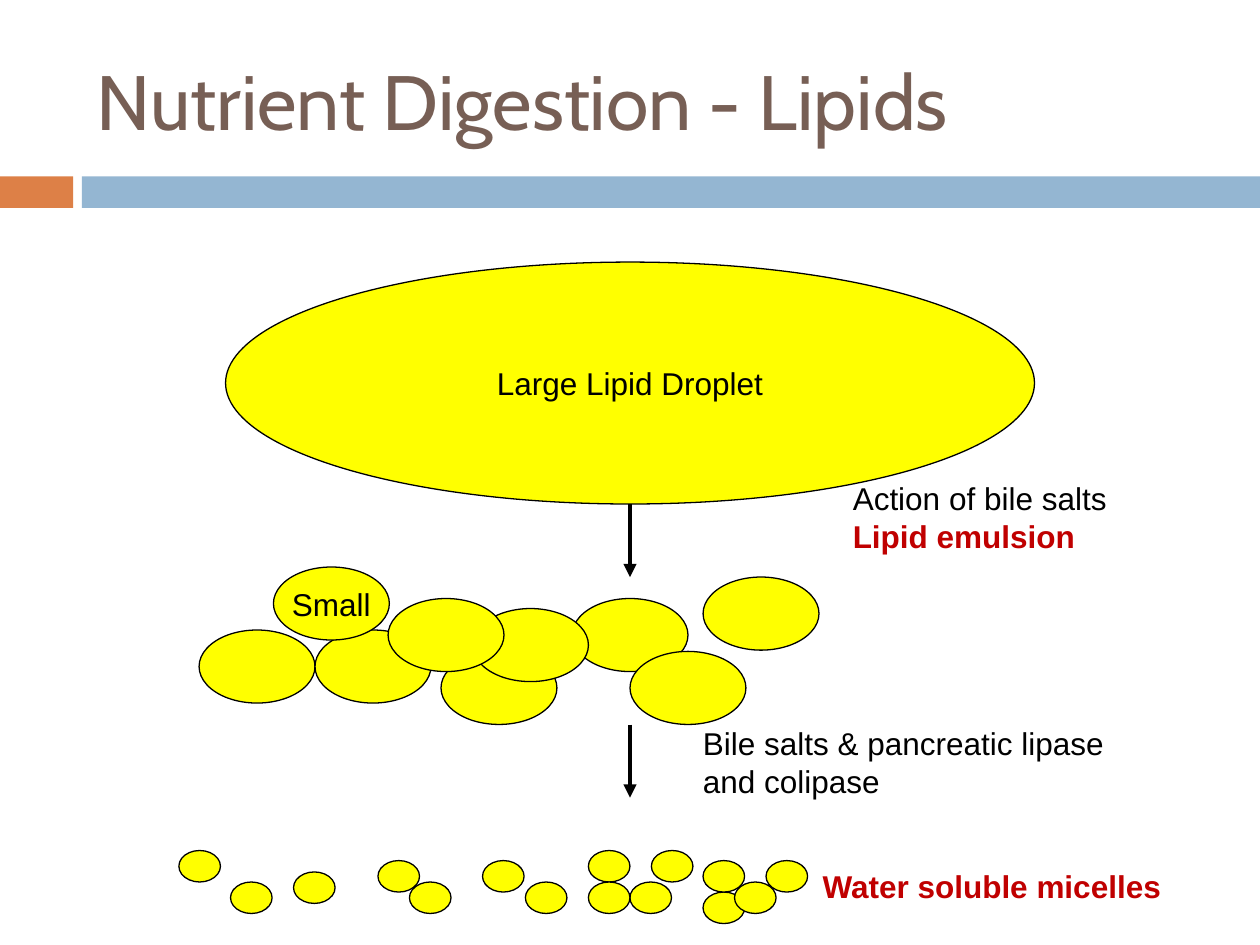
"""Build the lipid digestion slide: large droplet, emulsion, micelles."""
from pptx import Presentation
from pptx import util as u
from pptx.dml.color import RGBColor
from pptx.enum import shapes, text
from pptx.oxml import parse_xml
from pptx.oxml.ns import nsdecls

ORANGE = RGBColor(0xDD, 0x80, 0x47)
BLUE = RGBColor(0x94, 0xB6, 0xD2)
BROWN = RGBColor(0x77, 0x5F, 0x55)
YELLOW = RGBColor(0xFF, 0xFF, 0x00)
RED = RGBColor(0xC0, 0x00, 0x00)
BLACK = RGBColor(0x00, 0x00, 0x00)

DROPLET_SIZE = (0.92, 0.58)
MICELLE_SIZE = (0.33, 0.25)
DROPLETS = [
    (1.58, 5, ""), (5.58, 4.58, ""), (2.5, 5, ""), (2.17, 4.5, "Small"),
    (4.54, 4.75, ""), (3.5, 5.17, ""), (3.75, 4.83, ""), (5, 5.17, ""),
    (3.08, 4.75, ""),
]
MICELLES = [
    (1.42, 6.75), (1.83, 7), (3.25, 7), (2.33, 6.92), (3.83, 6.83),
    (5, 7), (4.17, 7), (3, 6.83), (4.67, 6.75), (5.17, 6.75),
    (4.67, 7), (5.58, 7.08), (5.58, 6.83), (6.08, 6.83), (5.83, 7),
]


class Deck:
    """Hold the text style and the current slide."""

    def __init__(self, prs):
        self.s = prs.slides.add_slide(prs.slide_layouts[6])
        self.body = {"name": "Arial", "size": u.Pt(18), "bold": False}

    def fill_text(self, tf, lines, align=text.PP_ALIGN.LEFT, **style):
        """Fill a text frame with (wording, format) lines."""
        for i, (words, fmt) in enumerate(lines):
            p = tf.add_paragraph() if i else tf.paragraphs[0]
            p.alignment = align
            r = p.add_run()
            r.text = words
            values = {**self.body, **style, **fmt}
            r.font.color.rgb = values.pop("color", BLACK)
            for name, value in values.items():
                setattr(r.font, name, value)

    def shape(self, kind, box, fill):
        """Add a filled preset shape without a shadow."""
        sp = self.s.shapes.add_shape(kind, *map(u.Inches, box))
        sp.shadow.inherit = False
        sp.fill.solid()
        sp.fill.fore_color.rgb = fill
        return sp

    def bar(self, box, fill):
        """Add a plain band."""
        self.shape(shapes.MSO_SHAPE.RECTANGLE, box, fill).line.fill.background()

    def drop(self, x, y, size, label=""):
        """Add a yellow lipid drop, labelled if asked."""
        sp = self.shape(shapes.MSO_SHAPE.OVAL, (x, y, *size), YELLOW)
        sp.line.color.rgb = BLACK
        sp.line.width = u.Pt(0.75)
        if label:
            tf = sp.text_frame
            tf.word_wrap = False
            tf.vertical_anchor = text.MSO_ANCHOR.MIDDLE
            self.fill_text(tf, [(label, {})], text.PP_ALIGN.CENTER)

    def arrow(self, x, top, bottom):
        """Add a downward arrow."""
        c = self.s.shapes.add_connector(
            shapes.MSO_CONNECTOR.STRAIGHT, *map(u.Inches, (x, top, x, bottom)))
        c.line.color.rgb = BLACK
        c.line.width = u.Pt(2.5)
        c.line._get_or_add_ln().append(
            parse_xml(f'<a:tailEnd {nsdecls("a")} type="triangle"/>'))
        c._element.spPr.append(parse_xml(f'<a:effectLst {nsdecls("a")}/>'))

    def note(self, box, lines):
        """Add an unwrapped text box that fits its text."""
        tf = self.s.shapes.add_textbox(*map(u.Inches, box)).text_frame
        tf.word_wrap = False
        tf.auto_size = text.MSO_AUTO_SIZE.SHAPE_TO_FIT_TEXT
        self.fill_text(tf, lines)

    def title(self, box, words):
        """Add the slide heading."""
        tf = self.s.shapes.add_textbox(*map(u.Inches, box)).text_frame
        tf.word_wrap = True
        tf.vertical_anchor = text.MSO_ANCHOR.MIDDLE
        self.fill_text(tf, [(words, {})], name="Cabin", size=u.Pt(44), color=BROWN)


def main():
    prs = Presentation()
    prs.slide_width, prs.slide_height = u.Inches(10), u.Inches(7.5)
    deck = Deck(prs)
    result = {"color": RED, "bold": True}

    deck.bar((0, 1.4, 0.58, 0.25), ORANGE)
    deck.bar((0.65, 1.4, 9.35, 0.25), BLUE)
    deck.title((0.67, 0.25, 8.92, 1.08), "Nutrient Digestion - Lipids")

    deck.drop(1.79, 2.08, (6.42, 1.92), "Large Lipid Droplet")
    for x, y, label in DROPLETS:
        deck.drop(x, y, DROPLET_SIZE, label)
    for x, y in MICELLES:
        deck.drop(x, y, MICELLE_SIZE)
    for top in (4, 5.75):
        deck.arrow(5, top, top + 0.58)

    deck.note((6.67, 3.75, 2.24, 0.71),
              [("Action of bile salts", {}), ("Lipid emulsion", result)])
    deck.note((5.48, 5.7, 4.38, 0.9),
              [("Bile salts & pancreatic lipase", {}), ("and colipase", {})])
    deck.note((6.43, 6.83, 2.91, 0.4), [("Water soluble micelles", result)])
    prs.save("out.pptx")


if __name__ == "__main__":
    main()
